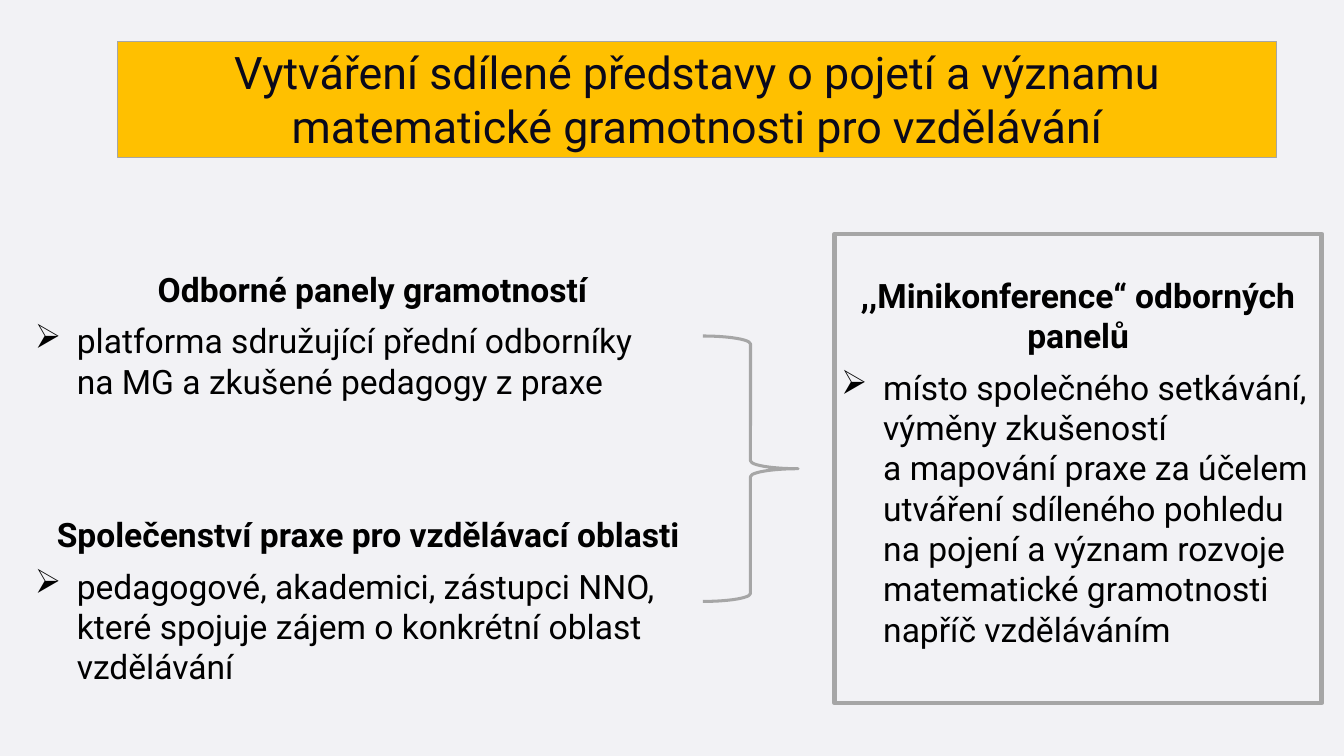
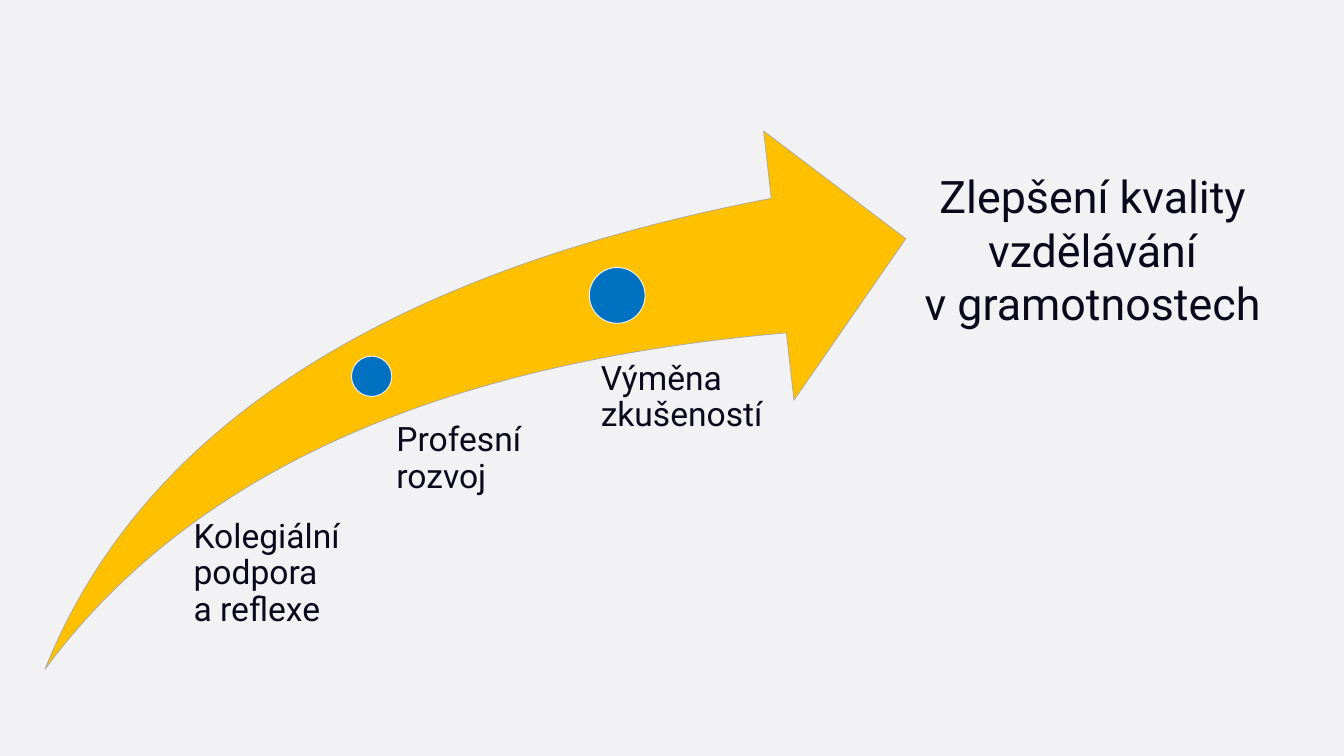
from dataclasses import dataclass
from typing import Any, NamedTuple

from lxml import etree
from pptx import Presentation
from pptx import util as u
from pptx.dml.color import RGBColor
from pptx.enum import shapes, text
from pptx.oxml import ns

BACKGROUND = RGBColor(0xF2, 0xF2, 0xF5)
AMBER = RGBColor(0xFF, 0xC0, 0x00)
GREY = RGBColor(0xA6, 0xA6, 0xA6)
BLUE = RGBColor(0x00, 0x70, 0xC0)
NAVY = RGBColor(0x0A, 0x09, 0x1B)
BLACK = RGBColor(0x00, 0x00, 0x00)

FONT = "Roboto"
BULLET = "➢"
BULLET_INDENT = u.Pt(45)
CENTER = text.PP_ALIGN.CENTER
LEFT = text.PP_ALIGN.LEFT
TOP = text.MSO_ANCHOR.TOP
MIDDLE = text.MSO_ANCHOR.MIDDLE
Kind = shapes.MSO_SHAPE

HEADLINE = {"size": u.Pt(48), "bold": False}
HEADING = {"size": u.Pt(36), "bold": True}
BODY = {"size": u.Pt(36), "bold": False}


class Box(NamedTuple):
    left: float
    top: float
    width: float
    height: float

    def lengths(self) -> list[u.Length]:
        return [u.Pt(value) for value in self]


@dataclass
class Topic:
    box: Box
    heading: str
    detail: str


@dataclass
class Milestone:
    caption: str
    box: Box
    inset: float
    dot: Box | None = None


TITLE = "Vytváření sdílené představy o pojetí a významu matematické gramotnosti pro vzdělávání"
TITLE_BOX = Box(126, 44.6, 1242, 123.8)

TOPICS = [
    Topic(Box(30.2, 250.6, 738, 216), "Odborné panely gramotností",
          "platforma sdružující přední odborníky \nna MG a zkušené pedagogy z praxe"),
    Topic(Box(30.2, 541.4, 738, 203.8), "Společenství praxe pro vzdělávací oblasti ",
          "pedagogové, akademici, zástupci NNO, které spojuje zájem o konkrétní oblast vzdělávání"),
]
CONFERENCE = Topic(
    Box(894.2, 250.6, 522, 502.6), ",,Minikonference“ odborných panelů",
    "místo společného setkávání, výměny zkušeností \na mapování praxe za účelem utváření "
    "sdíleného pohledu na pojení a význam rozvoje matematické gramotnosti napříč vzděláváním")
BRACE_BOX = Box(753, 360, 102.2, 284.4)

SWOOSH_BOX = Box(48.2, 140.4, 922.3, 576.7)
MILESTONES = [
    Milestone("Kolegiální podpora \na reflexe", Box(194.4, 556.6, 215.3, 166.3), 13),
    Milestone("Profesní rozvoj", Box(401.8, 452.9, 182.9, 216.7), 23,
              Box(376.6, 381.6, 43.2, 43.2)),
    Milestone("Výměna zkušeností", Box(612, 387.4, 268.6, 221.8), 31.7,
              Box(631.4, 286.6, 59.8, 59.8)),
]
OUTCOME = "Zlepšení kvality vzdělávání\nv gramotnostech"
OUTCOME_BOX = Box(967.7, 177.1, 406.1, 181.4)


def apply(target: Any, values: dict[str, Any]) -> None:
    for name, value in values.items():
        setattr(target, name, value)


def add_figure(parent: Any, kind: Kind, box: Box, line: RGBColor, width: float,
               fill: RGBColor | None = None) -> Any:
    shape = parent.add_shape(kind, *box.lengths())
    shape.shadow.inherit = False
    if fill is None:
        shape.fill.background()
    else:
        shape.fill.solid()
        shape.fill.fore_color.rgb = fill
    shape.line.color.rgb = line
    shape.line.width = u.Pt(width)
    return shape


def set_frame(shape: Any, **values: Any) -> Any:
    frame = shape.text_frame
    apply(frame, {"word_wrap": True, "vertical_anchor": TOP} | values)
    return frame


def write(paragraph: Any, words: str, style: dict[str, Any], color: RGBColor,
          **values: Any) -> None:
    paragraph.text = words
    apply(paragraph, values)
    for run in paragraph.runs:
        apply(run.font, {"name": FONT} | style)
        run.font.color.rgb = color


def add_bullet(paragraph: Any) -> None:
    properties = paragraph._p.get_or_add_pPr()
    properties.set("marL", str(BULLET_INDENT))
    properties.set("indent", str(-BULLET_INDENT))
    etree.SubElement(properties, ns.qn("a:buChar")).set("char", BULLET)


def fill_topic(shape: Any, topic: Topic, **values: Any) -> None:
    frame = set_frame(shape, vertical_anchor=MIDDLE, **values)
    write(frame.paragraphs[0], topic.heading, HEADING, BLACK,
          alignment=CENTER, space_after=u.Pt(12))
    detail = frame.add_paragraph()
    write(detail, topic.detail, BODY, BLACK, alignment=LEFT, space_after=u.Pt(12))
    add_bullet(detail)


def add_slide(presentation: Any) -> Any:
    slide = presentation.slides.add_slide(presentation.slide_layouts[6])
    slide.background.fill.solid()
    slide.background.fill.fore_color.rgb = BACKGROUND
    return slide


def build_panels(presentation: Any) -> None:
    canvas = add_slide(presentation).shapes
    title = add_figure(canvas, Kind.RECTANGLE, TITLE_BOX, GREY, 0.75, AMBER)
    write(set_frame(title).paragraphs[0], TITLE, HEADLINE, NAVY, alignment=CENTER)
    for topic in TOPICS:
        fill_topic(canvas.add_textbox(*topic.box.lengths()), topic)
    conference = add_figure(canvas, Kind.RECTANGLE, CONFERENCE.box, GREY, 5)
    fill_topic(conference, CONFERENCE, margin_bottom=u.Pt(17.6))
    add_figure(canvas, Kind.RIGHT_BRACE, BRACE_BOX, GREY, 3.25)


def build_growth(presentation: Any) -> None:
    canvas = add_slide(presentation).shapes
    journey = canvas.add_group_shape().shapes
    swoosh = add_figure(journey, Kind.SWOOSH_ARROW, SWOOSH_BOX, GREY, 0.75, AMBER)
    swoosh.adjustments[0] = swoosh.adjustments[1] = 0.25
    for milestone in MILESTONES:
        if milestone.dot:
            add_figure(journey, Kind.OVAL, milestone.dot, BACKGROUND, 1, BLUE)
        caption = journey.add_textbox(*milestone.box.lengths())
        frame = set_frame(caption, margin_left=u.Pt(milestone.inset),
                          margin_top=0, margin_right=0, margin_bottom=0)
        write(frame.paragraphs[0], milestone.caption, BODY, NAVY, line_spacing=0.9)
    outcome = canvas.add_textbox(*OUTCOME_BOX.lengths())
    write(set_frame(outcome).paragraphs[0], OUTCOME, HEADLINE, NAVY, alignment=CENTER)


def main() -> None:
    presentation = Presentation()
    apply(presentation, {"slide_width": u.Pt(1440), "slide_height": u.Pt(810)})
    build_panels(presentation)
    build_growth(presentation)
    presentation.save("out.pptx")


if __name__ == "__main__":
    main()
